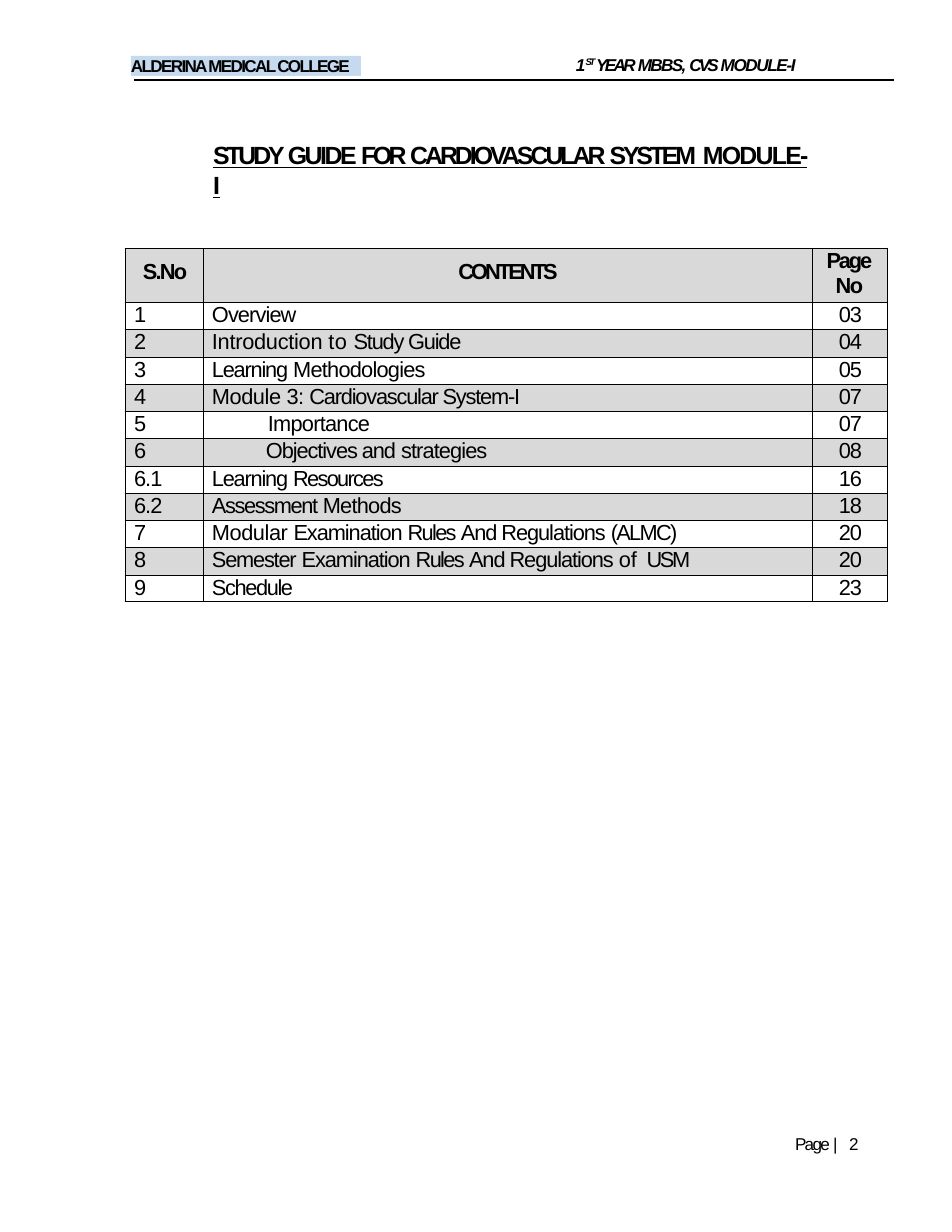
from lxml import etree
from pptx import Presentation
from pptx import util as u
from pptx.dml.color import RGBColor
from pptx.enum import shapes, text
from pptx.oxml import ns

FONT, BLACK, GREY, BLUE = "Arial", "000000", "D9D9D9", "C5D9EF"
SCALE = 914400 / 112


def px(n):
    return u.Emu(round(n * SCALE))


def rgb(code):
    return RGBColor.from_string(code)


def write(par, runs, size, bold=False, italic=False, line=False, left=0, lead=None):
    """Add (words, letter spacing) runs to a paragraph."""
    if left:
        props = par._p.get_or_add_pPr()
        props.set("marL", str(px(left)))
        props.set("indent", "0")
    if lead:
        par.line_spacing = u.Pt(lead)
    for words, gap in runs:
        run = par.add_run()
        run.text = words
        font = run.font
        font.name, font.size = FONT, u.Pt(size)
        font.bold, font.italic, font.underline = bold, italic, line
        font.color.rgb = rgb(BLACK)
        run._r.get_or_add_rPr().set("spc", str(round(gap * 100)))


def frame(shape, top=0):
    body = shape.text_frame
    body.margin_left = body.margin_right = body.margin_bottom = 0
    body.margin_top = px(top)
    body.word_wrap = True
    body.auto_size = text.MSO_AUTO_SIZE.NONE
    body.vertical_anchor = text.MSO_ANCHOR.TOP
    par = body.paragraphs[0]
    par.alignment = text.PP_ALIGN.LEFT
    return par


prs = Presentation()
prs.slide_width, prs.slide_height = px(952), px(1232)
page = prs.slides.add_slide(prs.slide_layouts[5])

# Header rule
rule = page.shapes.add_connector(shapes.MSO_CONNECTOR.STRAIGHT, px(134), px(80), px(894), px(80))
rule.line.color.rgb = rgb(BLACK)
rule.line.width = u.Pt(0.75)
etree.SubElement(rule._element.spPr, ns.qn("a:effectLst"))

# Header: module on the right
box = page.shapes.add_textbox(px(575), px(53), px(310), px(22))
par = frame(box, 1)
write(par, [("1", -0.9)], 11, bold=True, italic=True, left=1)
write(par, [("ST ", -1.4)], 10.5, bold=True, italic=True)
par.runs[-1]._r.get_or_add_rPr().set("baseline", "32000")
write(par, [("YEAR ", -1.7), ("MBBS, ", -1.1), ("CVS ", -1.9), ("MODULE-I", -0.9)],
      11, bold=True, italic=True)

# Header: college on a blue band
band = page.shapes.add_shape(shapes.MSO_SHAPE.RECTANGLE, px(131), px(56), px(230), px(20))
band.shadow.inherit = False
band.fill.solid()
band.fill.fore_color.rgb = rgb(BLUE)
band.line.fill.background()
write(frame(band), [("ALDERINA MEDICAL COLLEGE", -1.1)], 11, bold=True, lead=12.9)

# Title
title = page.shapes.title
title.left, title.top, title.width, title.height = px(212), px(139), px(599), px(32)
write(frame(title, 1), [("STUDY ", -2), ("GUIDE ", -1.6), ("FOR ", -2.2),
                        ("CARDIOVASCULAR ", -1.9), ("SYSTEM", -2), (" ", -2.3),
                        ("MODULE-I", -1.1)], 16, bold=True, line=True, left=1)

# Contents: number, its spacing, left indent, entry, page
EXAM = [("Examination ", -0.7), ("Rules ", -1.1), ("And Regulations ", -0.7)]
ROWS = [
    ("1", 0, 9, [("Overview", -0.6)], "03"),
    ("2", 0, 9, [("Introduction ", -0.2), ("to ", 0.2), ("Study Guide", -0.8)], "04"),
    ("3", 0, 9, [("Learning ", -0.8), ("Methodologies", -0.5)], "05"),
    ("4", 0, 9, [("Module ", -0.3), ("3: ", -0.5), ("Cardiovascular System-I", -0.8)], "07"),
    ("5", 0, 65, [("Importance", -0.5)], "07"),
    ("6", 0, 63, [("Objectives and ", -0.7), ("strategies", -0.6)], "08"),
    ("6.1", -0.6, 9, [("Learning ", -0.8), ("Resources", -1.1)], "16"),
    ("6.2", -0.6, 9, [("Assessment ", -0.9), ("Methods", -0.5)], "18"),
    ("7", 0, 9, [("Modular ", -0.3), *EXAM, ("(ALMC)", -1.1)], "20"),
    ("8", 0, 9, [("Semester ", -0.8), *EXAM, ("of ", 0), (" USM", -1.6)], "20"),
    ("9", 0, 9, [("Schedule", -0.9)], "23"),
]
HEAD, BODY = 54, 300
count = len(ROWS)
grid = page.shapes.add_table(count + 1, 3, px(125), px(248), px(762), px(HEAD + BODY)).table
grid.first_row = grid.horz_banding = False
for col, wide in zip(grid.columns, (78, 609, 75)):
    col.width = px(wide)
grid.rows[0].height = px(HEAD)
for i in range(count):
    grid.rows[i + 1].height = px(round((i + 1) * BODY / count) - round(i * BODY / count))

# Cell margins, borders and alternate grey fill
for i in range(count + 1):
    for cell in grid.rows[i].cells:
        cell.margin_left = cell.margin_right = cell.margin_top = cell.margin_bottom = 0
        props = cell._tc.get_or_add_tcPr()
        for side in ("lnL", "lnR", "lnT", "lnB"):
            edge = etree.SubElement(props, ns.qn("a:" + side), w=str(u.Pt(0.5)))
            fill = etree.SubElement(edge, ns.qn("a:solidFill"))
            etree.SubElement(fill, ns.qn("a:srgbClr"), val=BLACK)
        if i % 2 == 0:
            cell.fill.solid()
            cell.fill.fore_color.rgb = rgb(GREY)
        else:
            cell.fill.background()

# Table head
num, name, leaf = grid.rows[0].cells
num.margin_top = name.margin_top = px(12)
write(num.text_frame.paragraphs[0], [("S.No", -1.2)], 14, bold=True, left=18)
write(name.text_frame.paragraphs[0], [("CONTENTS", -1.9)], 14, bold=True, left=1)
write(leaf.text_frame.paragraphs[0], [("Page", -1.4)], 14, bold=True, lead=16.2)
write(leaf.text_frame.add_paragraph(), [("No", -1)], 14, bold=True)
for par in (*name.text_frame.paragraphs, *leaf.text_frame.paragraphs):
    par.alignment = text.PP_ALIGN.CENTER

# Table entries
for i, (mark, gap, left, entry, leaf) in enumerate(ROWS, 1):
    parts = (([(mark, gap)], 9), (entry, left), ([(leaf, -0.7)], 27))
    for cell, (runs, dent) in zip(grid.rows[i].cells, parts):
        write(cell.text_frame.paragraphs[0], runs, 14, left=dent, lead=16.2)

# Page number
foot = page.shapes.add_textbox(px(794), px(1136), px(72), px(20))
write(frame(foot), [("Page ", -1.1), ("| ", 2.2), ("2", -0.6)], 11, left=1, lead=11.5)

prs.save("out.pptx")
